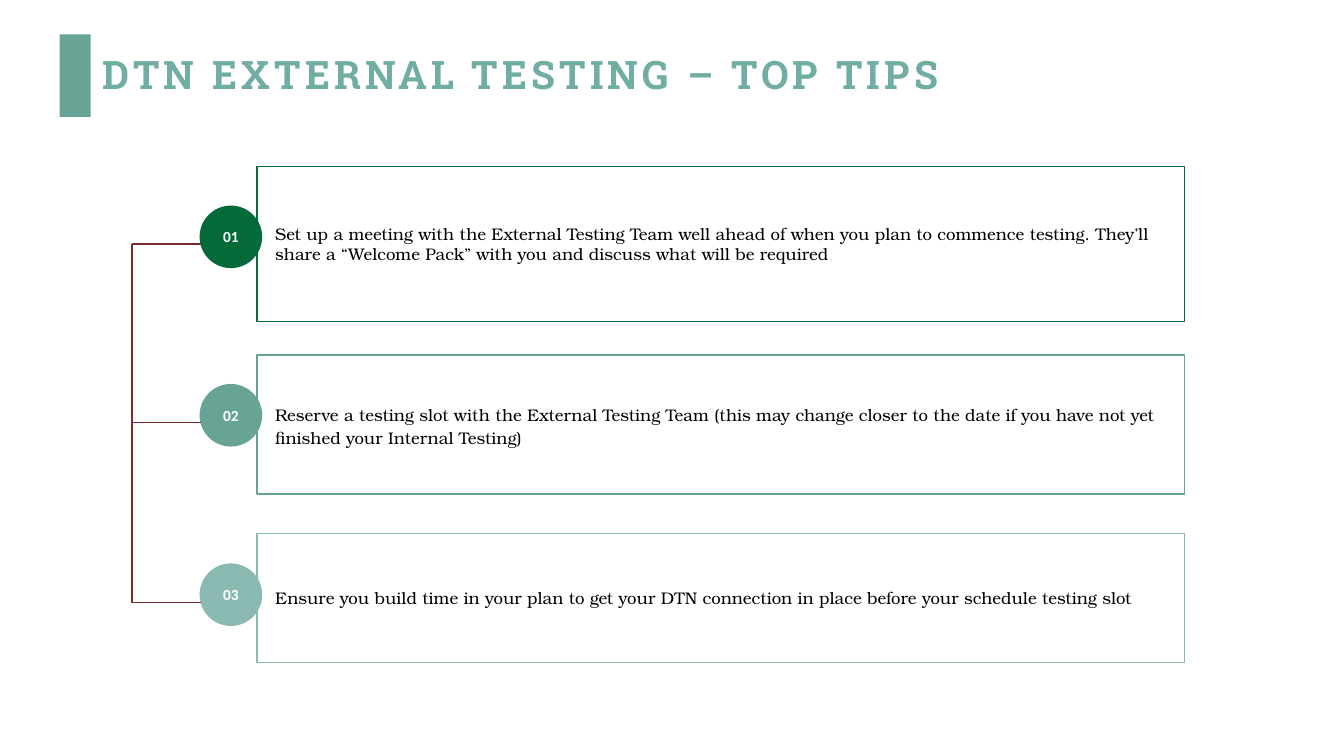
import pptx
import pptx.util
import pptx.dml.color
import pptx.enum.shapes
import pptx.enum.text
import lxml.etree

Inches = pptx.util.Inches
Pt = pptx.util.Pt
RGBColor = pptx.dml.color.RGBColor
SHAPE = pptx.enum.shapes.MSO_SHAPE
ALIGN = pptx.enum.text.PP_ALIGN

GREEN = RGBColor(0x04, 0x6A, 0x38)
TEAL = RGBColor(0x68, 0xA4, 0x95)
PALE = RGBColor(0x8A, 0xB9, 0xB1)
TITLE = RGBColor(0x70, 0xAD, 0xA3)
MAROON = RGBColor(0x7B, 0x28, 0x2E)
BLACK = RGBColor(0, 0, 0)
WHITE = RGBColor(0xFF, 0xFF, 0xFF)

TRUNK = 1.31
DOT = 1.99
STOPS = [2.42, 4.19, 5.98]

TIPS = [
    ("03", PALE, 5.29, 1.28, 5.6, 1.0,
     "Ensure you build time in your plan to get your DTN connection in place "
     "before your schedule testing slot"),
    ("02", TEAL, 3.52, 1.38, 3.82, 1.15,
     "Reserve a testing slot with the External Testing Team (this may change closer "
     "to the date if you have not yet finished your Internal Testing)"),
    ("01", GREEN, 1.65, 1.54, 2.05, 1.0,
     "Set up a meeting with the External Testing Team well ahead of when you plan "
     "to commence testing. They’ll share a “Welcome Pack” with you and discuss "
     "what will be required"),
]


def write(shape, text, face, size, color, bold, align, space):
    frame = shape.text_frame
    frame.word_wrap = True
    frame.auto_size = pptx.enum.text.MSO_AUTO_SIZE.NONE
    frame.vertical_anchor = pptx.enum.text.MSO_ANCHOR.MIDDLE
    para = frame.paragraphs[0]
    para.alignment = align
    para.line_spacing = space
    run = para.add_run()
    run.text = text
    run.font.name = face
    run.font.size = Pt(size)
    run.font.bold = bold
    run.font.color.rgb = color
    return run


def inset(shape, left, top, right, low):
    frame = shape.text_frame
    frame.margin_left = Inches(left)
    frame.margin_top = Inches(top)
    frame.margin_right = Inches(right)
    frame.margin_bottom = Inches(low)


def draw(slide, kind, left, top, width, height, fill=None, edge=None, weight=1):
    shape = slide.shapes.add_shape(
        kind, Inches(left), Inches(top), Inches(width), Inches(height))
    shape.shadow.inherit = False
    if fill is None:
        shape.fill.background()
    else:
        shape.fill.solid()
        shape.fill.fore_color.rgb = fill
    if edge is None:
        shape.line.fill.background()
    else:
        shape.line.color.rgb = edge
        shape.line.width = Pt(weight)
    return shape


def join(slide, left, top, right, low):
    line = slide.shapes.add_connector(
        pptx.enum.shapes.MSO_CONNECTOR.STRAIGHT,
        Inches(left), Inches(top), Inches(right), Inches(low))
    line.line.color.rgb = MAROON
    line.line.width = Pt(1)
    lxml.etree.SubElement(
        line._element.spPr, pptx.oxml.ns.qn("a:effectLst"))


def head(slide, text):
    title = slide.shapes.title
    title.left, title.top = Inches(0.92), Inches(0.4)
    title.width, title.height = Inches(10.15), Inches(0.72)
    run = write(title, text, "Roboto Slab", 28, TITLE, True, ALIGN.LEFT, 0.9)
    run.font._element.set("spc", "300")


def tip(slide, label, color, top, height, dot, space, text):
    box = draw(slide, SHAPE.RECTANGLE, 2.55, top, 9.2, height, edge=color)
    inset(box, 0.18, 0.06, 0.08, 0.06)
    write(box, text, "TeX Gyre Bonum", 12, BLACK, False, ALIGN.LEFT, space)
    disc = draw(slide, SHAPE.OVAL, DOT, dot, 0.6, 0.6, color, color, 1.5)
    inset(disc, 0, 0, 0, 0)
    write(disc, label, "Calibri", 11, WHITE, True, ALIGN.CENTER, 1.0)


def main():
    deck = pptx.Presentation()
    deck.slide_width, deck.slide_height = Inches(13.33), Inches(7.5)
    slide = deck.slides.add_slide(deck.slide_layouts[5])
    draw(slide, SHAPE.RECTANGLE, 0.59, 0.34, 0.31, 0.82, TEAL)
    head(slide, "DTN EXTERNAL TESTING – TOP TIPS")
    for item in TIPS:
        tip(slide, *item)
    join(slide, TRUNK, STOPS[0], TRUNK, STOPS[-1])
    for stop in STOPS:
        join(slide, TRUNK, stop, DOT, stop)
    deck.save("out.pptx")


if __name__ == "__main__":
    main()
